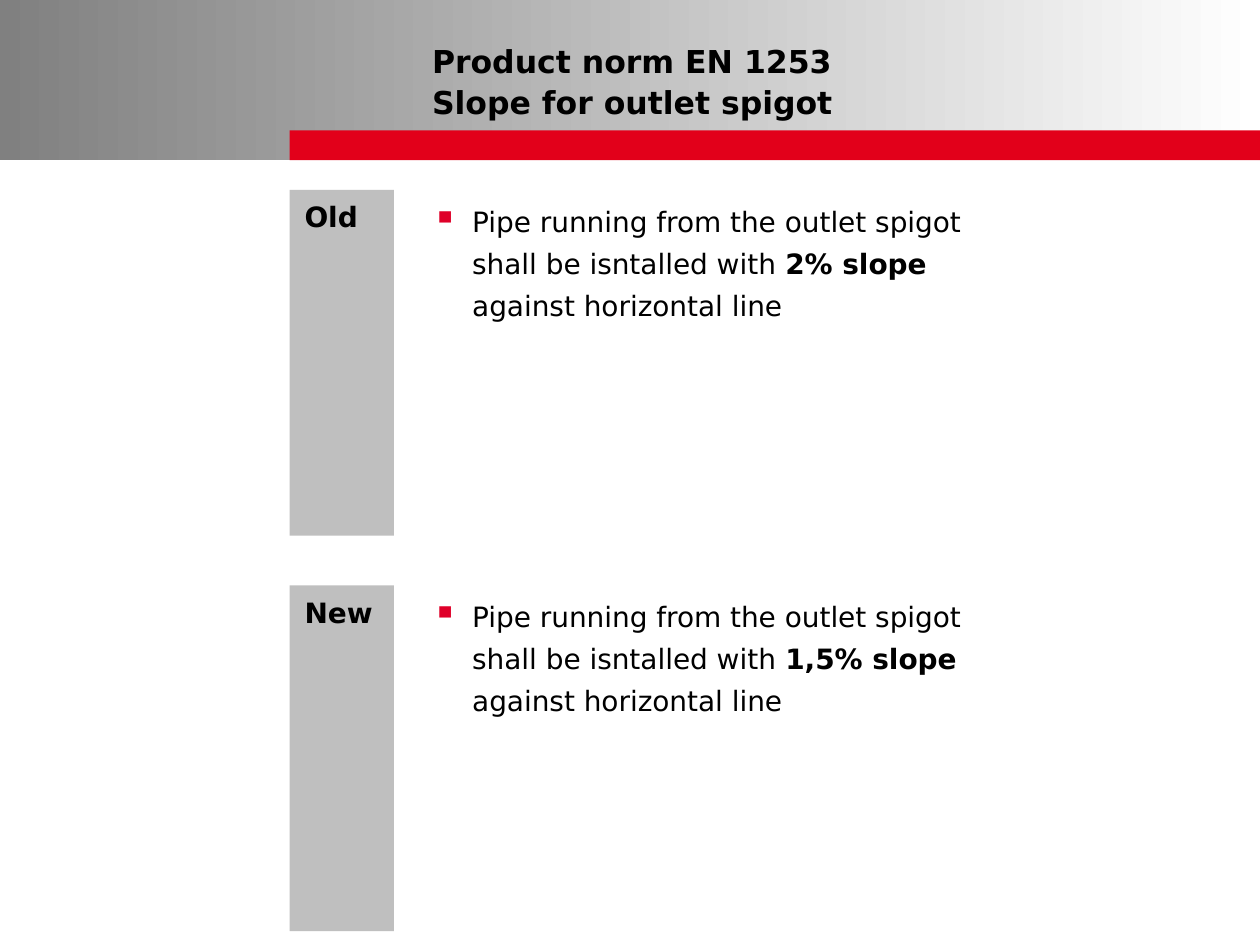
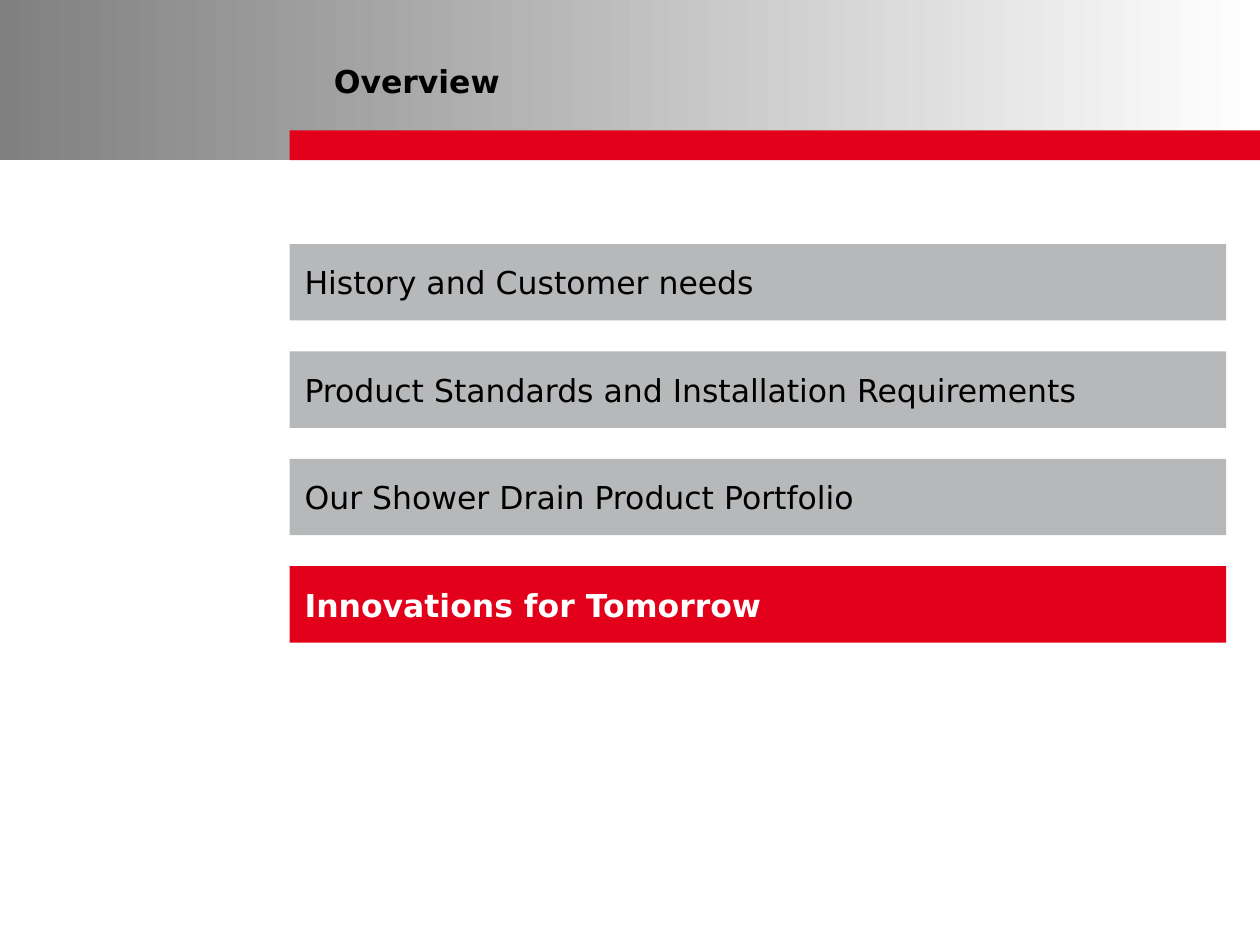
import dataclasses

import lxml.etree
import pptx
import pptx.dml.color
import pptx.enum.shapes
import pptx.enum.text
import pptx.oxml.ns
import pptx.util

Cm = pptx.util.Cm
Anchor = pptx.enum.text.MSO_ANCHOR


@dataclasses.dataclass(frozen=True)
class Theme:
    font: str = "DejaVu Sans"
    title_size: int = 18
    agenda_size: int = 18
    body_size: int = 16
    text: str = "000000"
    inverse_text: str = "FFFFFF"
    accent: str = "E2001A"
    bullet: str = "DF0029"
    label_fill: str = "BFBFBF"
    agenda_fill: str = "B7B8B9"
    header_start: str = "808080"
    header_end: str = "FFFFFF"


THEME = Theme()
SLIDE_WIDTH, SLIDE_HEIGHT = 25.4, 19.05
HEADER_HEIGHT = 3.23
CONTENT_LEFT = 5.84


def rgb(color):
    return pptx.dml.color.RGBColor.from_string(color)


def add_rectangle(slide, left, top, width, height, fill=None):
    shape = slide.shapes.add_shape(
        pptx.enum.shapes.MSO_SHAPE.RECTANGLE, Cm(left), Cm(top), Cm(width), Cm(height))
    shape.shadow.inherit = False
    shape.line.fill.background()
    if fill:
        shape.fill.solid()
        shape.fill.fore_color.rgb = rgb(fill)
    return shape


def add_text_box(slide, left, top, width, height):
    return slide.shapes.add_textbox(Cm(left), Cm(top), Cm(width), Cm(height))


def add_bullet(paragraph, indent=0.81):
    properties = paragraph._p.get_or_add_pPr()
    properties.set("marL", str(Cm(indent)))
    properties.set("indent", str(-Cm(indent)))
    qn = pptx.oxml.ns.qn
    color = lxml.etree.SubElement(properties, qn("a:buClr"))
    lxml.etree.SubElement(color, qn("a:srgbClr"), val=THEME.bullet)
    lxml.etree.SubElement(properties, qn("a:buSzPct"), val="125000")
    lxml.etree.SubElement(properties, qn("a:buChar"), char="▪")


def write_text(shape, text, size, color=THEME.text, bold=False, anchor=Anchor.TOP,
               insets=(0, 0, 0, 0), line_spacing=1.0, bullet=False):
    """Fill a shape with one paragraph; text is a string or (text, bold) pairs."""
    frame = shape.text_frame
    frame.word_wrap = True
    frame.vertical_anchor = anchor
    (frame.margin_left, frame.margin_top,
     frame.margin_right, frame.margin_bottom) = map(Cm, insets)
    paragraph = frame.paragraphs[0]
    if bullet:
        add_bullet(paragraph)
    paragraph.alignment = pptx.enum.text.PP_ALIGN.LEFT
    paragraph.line_spacing = line_spacing
    pieces = [(text, bold)] if isinstance(text, str) else text
    for piece, piece_bold in pieces:
        for number, line in enumerate(piece.split("\n")):
            if number:
                paragraph.add_line_break()
            run = paragraph.add_run()
            run.text = line
            run.font.name = THEME.font
            run.font.size = pptx.util.Pt(size)
            run.font.bold = piece_bold
            run.font.color.rgb = rgb(color)


def add_header(slide, title, left, bottom, height):
    """Draw the gradient band, the red bar and a title resting on bottom."""
    band = add_rectangle(slide, 0, 0, SLIDE_WIDTH, HEADER_HEIGHT)
    band.fill.gradient()
    band.fill.gradient_angle = 0
    for stop, color in zip(band.fill.gradient_stops,
                           (THEME.header_start, THEME.header_end)):
        stop.color.rgb = rgb(color)
    bar_height = 0.6
    add_rectangle(slide, CONTENT_LEFT, HEADER_HEIGHT - bar_height,
                  SLIDE_WIDTH - CONTENT_LEFT, bar_height, THEME.accent)
    title_box = add_text_box(slide, left, bottom - height, 16, height)
    write_text(title_box, title, THEME.title_size, bold=True,
               anchor=Anchor.BOTTOM, line_spacing=1.1)


def add_requirement(slide, left, top, height, label, statement):
    """Place a labelled grey column with a bulleted statement to its right."""
    column = add_rectangle(slide, left, top, 2.1, height, THEME.label_fill)
    write_text(column, label, THEME.body_size, bold=True, insets=(0.3, 0.2, 0, 0.1))
    statement_box = add_text_box(slide, left + 2.87, top + 0.12, 11.35, 2.5)
    write_text(statement_box, statement, THEME.body_size, line_spacing=1.25, bullet=True)


def add_agenda(slide, left, top, width, items, current):
    """Stack one bar per item, highlighting the current one."""
    bar_height, pitch = 1.54, 2.165
    for index, item in enumerate(items):
        active = item == current
        bar = add_rectangle(slide, left, top + index * pitch, width, bar_height,
                            THEME.accent if active else THEME.agenda_fill)
        write_text(bar, item, THEME.agenda_size, bold=active, anchor=Anchor.MIDDLE,
                   color=THEME.inverse_text if active else THEME.text,
                   insets=(0.3, 0, 0, 0))


def build_slope_slide(slide):
    add_header(slide, "Product norm EN 1253\nSlope for outlet spigot",
               left=8.71, bottom=2.44, height=1.7)
    for index, (label, slope) in enumerate((("Old", "2%"), ("New", "1,5%"))):
        statement = (
            ("Pipe running from the outlet spigot shall be isntalled with ", False),
            (f"{slope} slope ", True),
            ("against horizontal line", False),
        )
        add_requirement(slide, CONTENT_LEFT, 3.83 + index * 7.97, 6.97, label, statement)


def build_overview_slide(slide):
    add_header(slide, "Overview", left=6.73, bottom=2.01, height=0.76)
    items = (
        "History and Customer needs",
        "Product Standards and Installation Requirements",
        "Our Shower Drain Product Portfolio",
        "Innovations for Tomorrow",
    )
    add_agenda(slide, CONTENT_LEFT, 4.92, 18.88, items, current=items[-1])


def main():
    presentation = pptx.Presentation()
    presentation.slide_width = Cm(SLIDE_WIDTH)
    presentation.slide_height = Cm(SLIDE_HEIGHT)
    blank_layout = presentation.slide_layouts[6]
    for build_slide in (build_slope_slide, build_overview_slide):
        build_slide(presentation.slides.add_slide(blank_layout))
    presentation.save("out.pptx")


if __name__ == "__main__":
    main()
